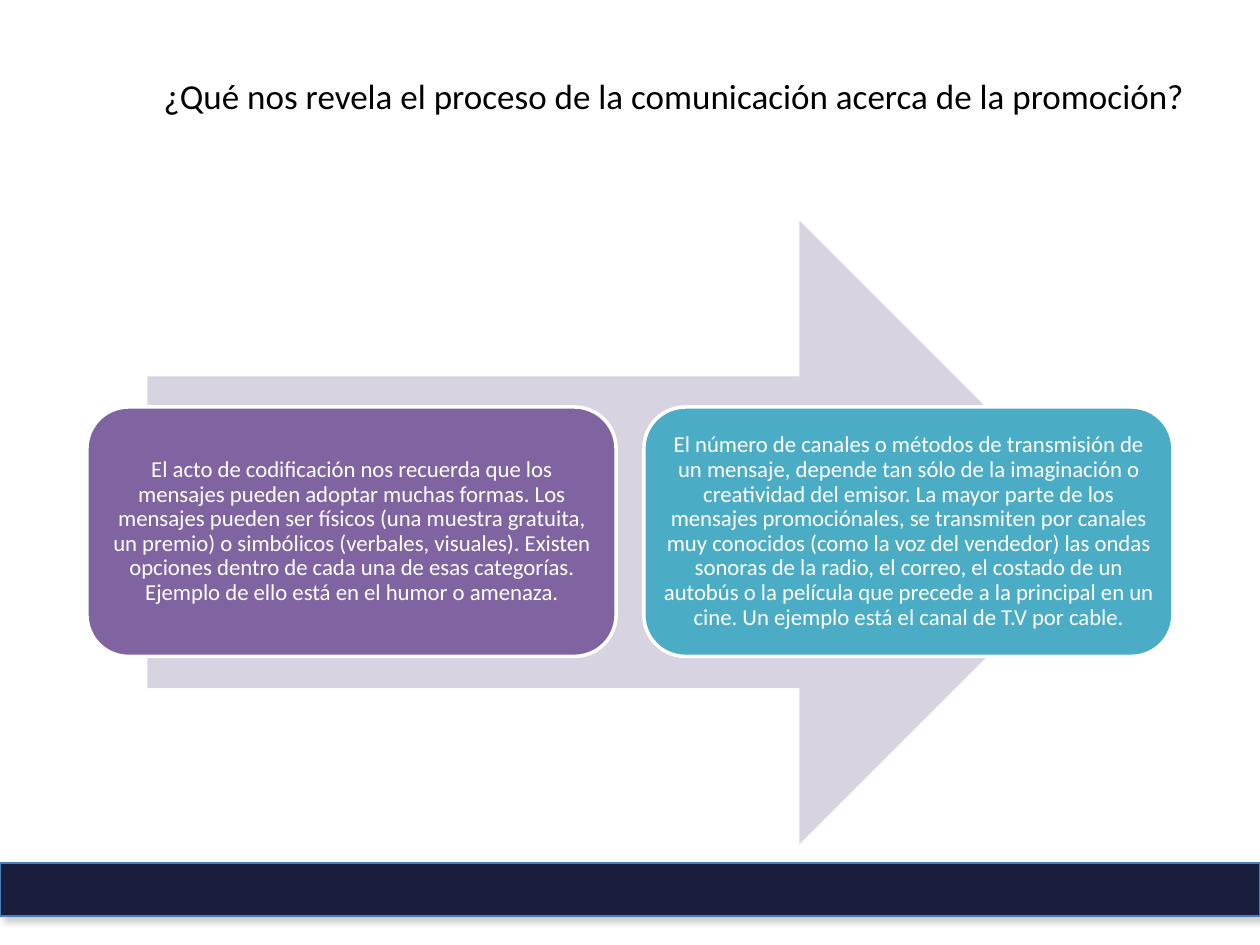
from lxml import etree
from pptx import Presentation
from pptx.dml.color import RGBColor
from pptx.enum.shapes import MSO_SHAPE
from pptx.enum.text import MSO_ANCHOR, MSO_AUTO_SIZE, PP_ALIGN
from pptx.oxml import parse_xml
from pptx.util import Inches, Pt

ARROW = MSO_SHAPE.RIGHT_ARROW
ROUND = MSO_SHAPE.ROUNDED_RECTANGLE
RECT = MSO_SHAPE.RECTANGLE
MIDDLE = MSO_ANCHOR.MIDDLE
FIXED = MSO_AUTO_SIZE.NONE
CENTER = PP_ALIGN.CENTER
RIGHT = PP_ALIGN.RIGHT

BLACK = RGBColor(0x00, 0x00, 0x00)
WHITE = RGBColor(0xFF, 0xFF, 0xFF)
LILAC = RGBColor(0xD8, 0xD3, 0xE0)
PURPLE = RGBColor(0x80, 0x64, 0xA2)
TEAL = RGBColor(0x4B, 0xAC, 0xC6)
NAVY = RGBColor(0x19, 0x1E, 0x3C)
BLUE = RGBColor(0x4A, 0x7E, 0xBB)

WIDTH, HEIGHT = 10, 7.5
NS = "http://schemas.openxmlformats.org/drawingml/2006/main"
SHADOW = (
    f'<a:effectLst xmlns:a="{NS}"><a:outerShdw blurRad="{Pt(4)}" dist="{Pt(3)}" '
    'dir="2700000" algn="tl" rotWithShape="0"><a:srgbClr val="808080">'
    '<a:alpha val="40000"/></a:srgbClr></a:outerShdw></a:effectLst>'
)

TITLE = "¿Qué nos revela el proceso de la comunicación acerca de la promoción?"
CARDS = [
    (PURPLE, "El acto de codificación nos recuerda que los mensajes pueden adoptar "
             "muchas formas. Los mensajes pueden ser físicos (una muestra gratuita, "
             "un premio) o simbólicos (verbales, visuales). Existen opciones dentro "
             "de cada una de esas categorías. Ejemplo de ello está en el humor o "
             "amenaza."),
    (TEAL, "El número de canales o métodos de transmisión de un mensaje, depende tan "
           "sólo de la imaginación o creatividad del emisor. La mayor parte de los "
           "mensajes promociónales, se transmiten por canales muy conocidos (como la "
           "voz del vendedor) las ondas sonoras de la radio, el correo, el costado de "
           "un autobús o la película que precede a la principal en un cine. Un ejemplo "
           "está el canal de T.V por cable."),
]


class Deck:
    font = "Calibri"

    def __init__(self):
        self.prs = Presentation()
        self.prs.slide_width = Inches(WIDTH)
        self.prs.slide_height = Inches(HEIGHT)
        self.slide = self.prs.slides.add_slide(self.prs.slide_layouts[5])

    def place(self, x, y, w, h):
        wide, high = self.prs.slide_width, self.prs.slide_height
        return [round(n) for n in (x * wide, y * high, w * wide, h * high)]

    def label(self, shape, text, size, color, align, inset):
        frame = shape.text_frame
        frame.text = text
        frame.word_wrap = True
        frame.auto_size = FIXED
        frame.vertical_anchor = MIDDLE
        frame.margin_left = frame.margin_right = Inches(inset)
        frame.margin_top = frame.margin_bottom = Inches(0.05)
        para = frame.paragraphs[0]
        para.alignment = align
        para.font.name = self.font
        para.font.size = Pt(size)
        para.font.color.rgb = color
        return frame

    def title(self, text, box):
        shape = self.slide.shapes.title
        shape.left, shape.top, shape.width, shape.height = self.place(*box)
        frame = self.label(shape, text, 20, BLACK, RIGHT, 0.1)
        frame.margin_bottom = Inches(0.38)

    def block(self, kind, box, fill, line=None, width=0):
        shape = self.slide.shapes.add_shape(kind, *self.place(*box))
        shape.shadow.inherit = False
        shape.fill.solid()
        shape.fill.fore_color.rgb = fill
        if line is None:
            shape.line.fill.background()
        else:
            shape.line.color.rgb = line
            shape.line.width = Pt(width)
        return shape

    def card(self, text, box, fill):
        shape = self.block(ROUND, box, fill, WHITE, 2)
        frame = self.label(shape, text, 13, WHITE, CENTER, 0.05)
        frame.paragraphs[0].line_spacing = 0.9

    def band(self, box):
        props = self.block(RECT, box, NAVY, BLUE, 0.75)._element.spPr
        old = props.find(etree.QName(NS, "effectLst"))
        props.replace(old, parse_xml(SHADOW))

    def save(self):
        self.prs.save("out.pptx")


def main():
    deck = Deck()
    deck.title(TITLE, (0.05, 0.04, 0.9, 1.25 / HEIGHT))
    deck.block(ARROW, (0.117, 1.75 / HEIGHT, 0.765, 0.66), LILAC)
    wide, gap = 0.42, 0.022
    left = (1 - 2 * wide - gap) / 2
    for col, (fill, text) in enumerate(CARDS):
        deck.card(text, (left + col * (wide + gap), 3.23 / HEIGHT, wide, 0.264), fill)
    deck.band((0, 6.85 / HEIGHT, 1, 0.056))
    deck.save()


if __name__ == "__main__":
    main()
